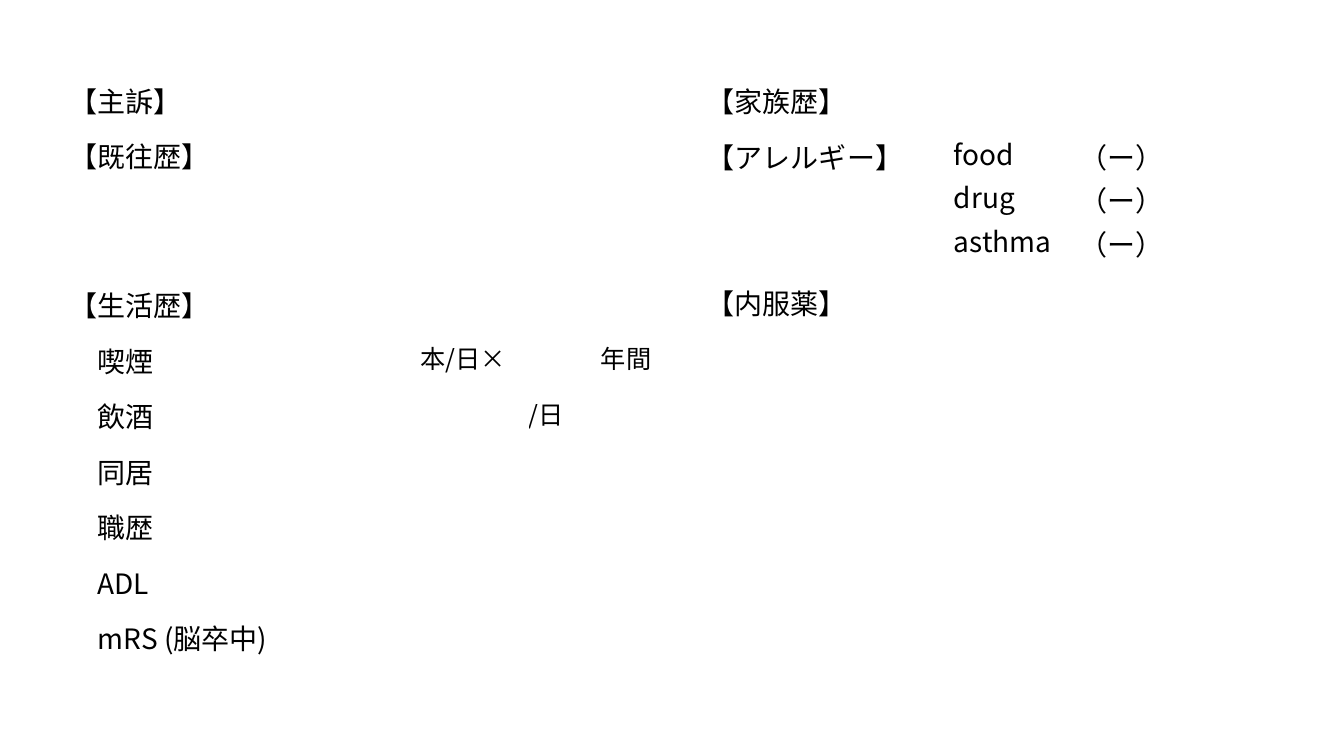
from lxml import etree
from pptx import Presentation
from pptx import util as u
from pptx.dml.color import RGBColor
from pptx.enum import text
from pptx.oxml.ns import qn

FONT = "Noto Sans CJK JP"
BLACK = RGBColor(0x00, 0x00, 0x00)
WHITE = RGBColor(0xFF, 0xFF, 0xFF)


def add_borders(cell):
    tcPr = cell._tc.get_or_add_tcPr()
    for i, side in enumerate(("lnL", "lnR", "lnT", "lnB")):
        ln = etree.Element(qn("a:" + side), w=str(u.Pt(1)))
        fill = etree.SubElement(ln, qn("a:solidFill"))
        etree.SubElement(fill, qn("a:srgbClr"), val=str(WHITE))
        tcPr.insert(i, ln)


def add_grid(s, box, widths, heights):
    """Plain table with white rules and no cell margins."""
    x, y, w, h = (u.Inches(v) for v in box)
    tbl = s.shapes.add_table(len(heights), len(widths), x, y, w, h).table
    tbl.first_row = tbl.horz_banding = False
    for col, width in zip(tbl.columns, widths):
        col.width = u.Inches(width)
    for row, height in zip(tbl.rows, heights):
        row.height = u.Inches(height)
    for cell in tbl.iter_cells():
        cell.margin_left = cell.margin_right = 0
        cell.margin_top = cell.margin_bottom = 0
        cell.vertical_anchor = text.MSO_ANCHOR.TOP
        cell.fill.background()
        add_borders(cell)
    return tbl


def write(cell, words, size=20):
    p = cell.text_frame.paragraphs[0]
    r = p.add_run()
    r.text = words
    r.font.size = u.Pt(size)
    r.font.name = FONT
    r.font.color.rgb = BLACK
    etree.SubElement(r.font._element, qn("a:ea"), typeface=FONT)
    return p


def add_history(s, box):
    """Complaint, past history and lifestyle."""
    tbl = add_grid(s, box, [2.43, 0.99, 1.13, 0.72, 0.66], [0.55, 1.48] + [0.55] * 7)
    labels = ["【主訴】", "【既往歴】", "【生活歴】", "　喫煙", "　飲酒",
              "　同居", "　職歴", "　ADL", "　mRS (脳卒中)"]
    smoking, drinking = 3, 4
    for i, label in enumerate(labels):
        write(tbl.cell(i, 0), label)
        if i != smoking:
            last = 2 if i == drinking else 4
            tbl.cell(i, 1).merge(tbl.cell(i, last))

    # Units for tobacco and alcohol
    write(tbl.cell(smoking, 2), " 本/日×", 18)
    write(tbl.cell(smoking, 4), "年間", 18)
    write(tbl.cell(drinking, 3), "/日", 18)


def add_background(s, box):
    """Family history, allergies and medication."""
    tbl = add_grid(s, box, [2.1, 1.6, 2.22], [0.56, 0.43, 0.43, 0.59] + [0.56] * 7)
    for i, label in ((0, "【家族歴】"), (1, "【アレルギー】"), (4, "【内服薬】")):
        write(tbl.cell(i, 0), label)
    tbl.cell(0, 1).merge(tbl.cell(0, 2))
    tbl.cell(1, 0).merge(tbl.cell(3, 0))
    tbl.cell(4, 1).merge(tbl.cell(10, 2))

    # Allergy checklist
    for i, allergen in enumerate(("food", "drug", "asthma"), 1):
        p = write(tbl.cell(i, 1), allergen)
        p.level = 1
        p.line_spacing = 0.9
        p.space_before = u.Pt(5)
        pPr = p._p.get_or_add_pPr()
        pPr.set("marL", "0")
        pPr.set("indent", str(u.Inches(0.35)))
        write(tbl.cell(i, 2), "（ー）")


def main():
    prs = Presentation()
    prs.slide_width, prs.slide_height = u.Inches(13.33), u.Inches(7.5)
    s = prs.slides.add_slide(prs.slide_layouts[6])
    add_history(s, (0.69, 0.79, 5.93, 5.93))
    add_background(s, (7.01, 0.79, 5.92, 5.93))
    prs.save("out.pptx")


if __name__ == "__main__":
    main()
